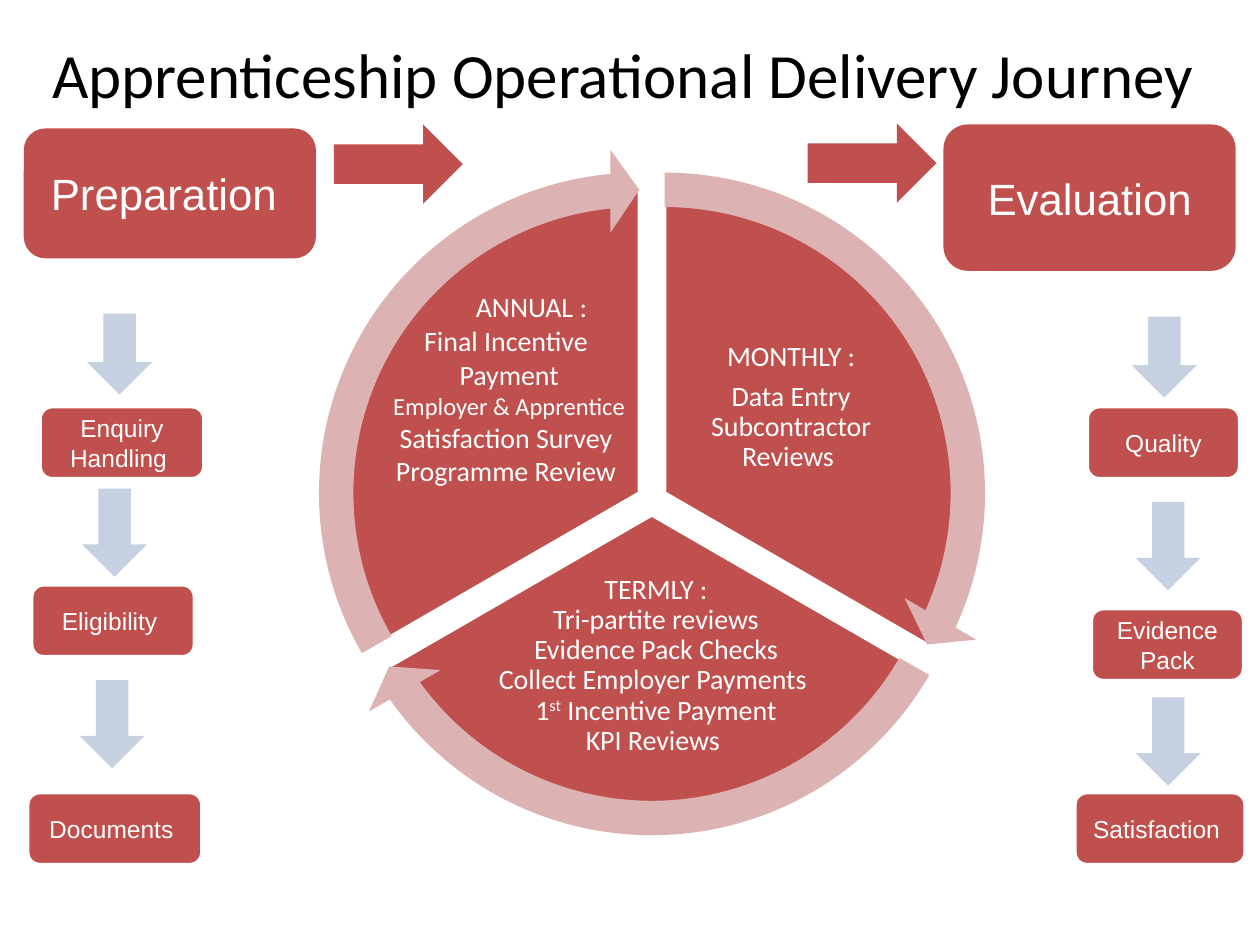
"""Build the apprenticeship operational delivery journey slide."""
from pptx import Presentation
from pptx.dml.color import RGBColor
from pptx.enum.shapes import MSO_SHAPE
from pptx.enum.text import MSO_ANCHOR, MSO_AUTO_SIZE, PP_ALIGN
from pptx.util import Cm, Pt

ARROW = MSO_SHAPE.RIGHT_ARROW
ROUNDED = MSO_SHAPE.ROUNDED_RECTANGLE
PIE = MSO_SHAPE.PIE
RING = MSO_SHAPE.CIRCULAR_ARROW
MIDDLE = MSO_ANCHOR.MIDDLE
TOP = MSO_ANCHOR.TOP
NO_FIT = MSO_AUTO_SIZE.NONE
CENTER = PP_ALIGN.CENTER

RED = RGBColor(0xC0, 0x50, 0x4D)
PINK = RGBColor(0xDC, 0xB3, 0xB2)
PALE_BLUE = RGBColor(0xC5, 0xD0, 0xE1)
WHITE = RGBColor(0xFF, 0xFF, 0xFF)
BLACK = RGBColor(0, 0, 0)

PIE_SIZE = 12.37
RING_SIZE = 13.89
STEP_HEIGHT = 1.45
DOWN_ARROW_WIDTH = 1.31
DEGREE = 0.6


class JourneySlide:
    """Hold the style and the current slide."""

    def __init__(self, slide):
        self.slide = slide
        self.heading_font = "Calibri"
        self.box_font = "Arial"

    def add_text(self, paragraph, text, size, font, color=WHITE, superscript=False):
        """Add one run to a centred paragraph."""
        paragraph.alignment = CENTER
        run = paragraph.add_run()
        run.text = text
        run.font.size = Pt(size)
        run.font.name = font
        run.font.color.rgb = color
        if superscript:
            run.font._element.set("baseline", "30000")

    def title(self, text):
        """Fill and place the title placeholder."""
        heading = self.slide.shapes.title
        heading.left, heading.top = Cm(-0.2), Cm(0.53)
        heading.width, heading.height = Cm(25.8), Cm(1.88)
        frame = heading.text_frame
        frame.auto_size = NO_FIT
        frame.vertical_anchor = MIDDLE
        self.add_text(frame.paragraphs[0], text, 36, self.heading_font, BLACK)

    def shape(self, preset, left, top, width, height, fill, outlined=False):
        """Add a flat filled shape."""
        item = self.slide.shapes.add_shape(
            preset, Cm(left), Cm(top), Cm(width), Cm(height))
        item.shadow.inherit = False
        item.fill.solid()
        item.fill.fore_color.rgb = fill
        if outlined:
            item.line.color.rgb = WHITE
            item.line.width = Pt(2)
        else:
            item.line.fill.background()
        return item

    def box(self, text, left, top, width, height, size, outlined=False):
        """Add a labelled rounded box."""
        item = self.shape(ROUNDED, left, top, width, height, RED, outlined)
        frame = item.text_frame
        frame.vertical_anchor = MIDDLE
        self.add_text(frame.paragraphs[0], text, size, self.box_font)

    def down_arrow(self, center_x, center_y, length):
        """Add a pale arrow pointing down."""
        arrow = self.shape(ARROW, center_x - length / 2,
                           center_y - DOWN_ARROW_WIDTH / 2,
                           length, DOWN_ARROW_WIDTH, PALE_BLUE)
        arrow.rotation = 90

    def disc(self, preset, center, size, fill, adjustments, outlined=False):
        """Add a round cycle part about its centre."""
        x, y = center
        item = self.shape(preset, x - size / 2, y - size / 2,
                          size, size, fill, outlined)
        for index, value in enumerate(adjustments):
            item.adjustments[index] = value

    def label(self, place, paragraphs, anchor=MIDDLE, inset=None, bottom=None,
              line_spacing=None, space_after=None, first_indent=None):
        """Add text whose paragraphs are lists of lines made of runs."""
        frame = self.slide.shapes.add_textbox(*map(Cm, place)).text_frame
        frame.word_wrap = True
        frame.vertical_anchor = anchor
        if inset is not None:
            frame.margin_left = frame.margin_right = Cm(inset)
            frame.margin_top = frame.margin_bottom = Cm(inset)
        if bottom is not None:
            frame.margin_bottom = Cm(bottom)
        for number, lines in enumerate(paragraphs):
            paragraph = frame.add_paragraph() if number else frame.paragraphs[0]
            if first_indent and number == 0:
                paragraph._p.get_or_add_pPr().set("marL", str(Cm(first_indent)))
            if line_spacing:
                paragraph.line_spacing = line_spacing
            if space_after:
                paragraph.space_after = Pt(space_after)
            for row, runs in enumerate(lines):
                if row:
                    paragraph.add_line_break()
                for text, size, superscript in runs:
                    self.add_text(paragraph, text, size, self.heading_font,
                                  superscript=superscript)


def plain(*lines):
    """Turn strings into lines of one 16 pt run each."""
    return [[(line, 16, False)] for line in lines]


def main():
    """Draw the slide and save it."""
    deck = Presentation()
    deck.slide_width, deck.slide_height = Cm(25.4), Cm(19.05)
    journey = JourneySlide(deck.slides.add_slide(deck.slide_layouts[5]))
    journey.title("Apprenticeship Operational Delivery Journey ")

    for left, top in ((6.73, 2.51), (16.28, 2.49)):
        journey.shape(ARROW, left, top, 2.6, 1.6, RED)
    journey.box("Preparation ", 0.48, 2.59, 5.89, 2.62, 25)
    journey.box("Evaluation", 19.02, 2.51, 5.89, 2.95, 25)

    steps = (
        ("Enquiry Handling ", 0.81, 8.2, 3.3),
        ("Eligibility ", 0.64, 11.79, 3.28),
        ("Documents ", 0.56, 15.98, 3.51),
        ("Quality", 21.92, 8.2, 3.07),
        ("Evidence Pack", 22, 12.27, 3.07),
        ("Satisfaction ", 21.67, 15.98, 3.43),
    )
    for text, left, top, width in steps:
        journey.box(text, left, top, width, STEP_HEIGHT, 14, outlined=True)
    for center_x, center_y, length in (
            (2.41, 7.14, 1.63), (2.31, 10.74, 1.78), (2.26, 14.6, 1.78),
            (23.47, 7.2, 1.63), (23.55, 11.01, 1.78), (23.55, 14.95, 1.78)):
        journey.down_arrow(center_x, center_y, length)

    terms = (((13.4, 9.94), 270, 30),
             ((13.14, 10.38), 30, 150),
             ((12.89, 9.94), 150, 270))
    for center, start, end in terms:
        journey.disc(PIE, center, PIE_SIZE, RED,
                     (start * DEGREE, end * DEGREE), outlined=True)
    for center, start, end in terms:
        journey.disc(RING, center, RING_SIZE, PINK,
                     (0.05, 3.28, end * DEGREE - 3.28, start * DEGREE, 0.06))

    journey.label((13.74, 6.38, 4.42, 3.68),
                  [plain("MONTHLY :"), plain("Data Entry Subcontractor Reviews ")],
                  inset=0.05, line_spacing=0.9, space_after=5.6)
    termly = plain("TERMLY :", "Tri-partite reviews", "Evidence Pack Checks",
                   "Collect Employer Payments ")
    termly.append([("1", 16, False), ("st", 16, True),
                   (" Incentive Payment", 16, False)])
    termly += plain("KPI Reviews ")
    journey.label((9.91, 12.22, 6.63, 3.25), [termly],
                  inset=0.05, bottom=0.9, line_spacing=0.9)
    annual = plain("Final Incentive ", "Payment")
    annual.append([("Employer & Apprentice ", 14, False),
                   ("Satisfaction Survey ", 16, False)])
    annual += plain("Programme Review ")
    journey.label((7.37, 5.72, 5.79, 4.95), [plain("ANNUAL :"), annual],
                  anchor=TOP, first_indent=0.9)
    deck.save("out.pptx")


if __name__ == "__main__":
    main()
